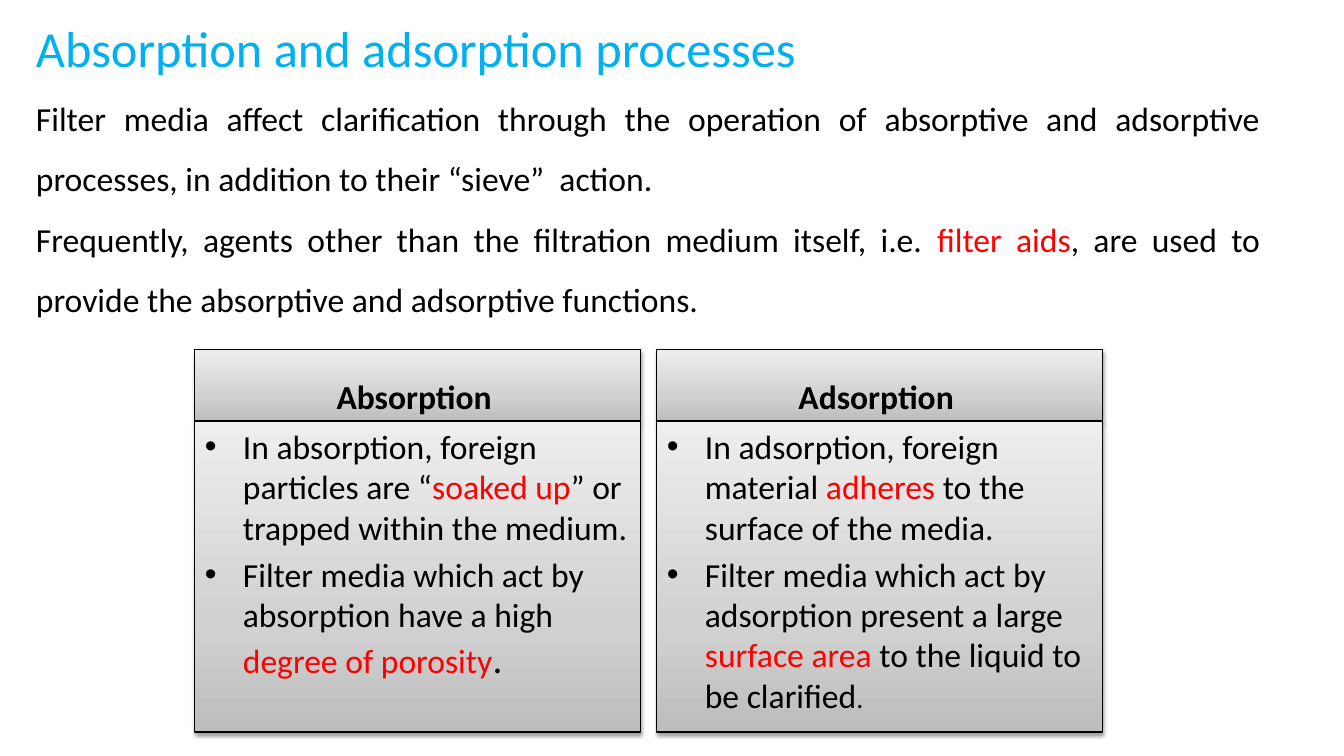
from lxml import etree
from pptx import Presentation
from pptx.dml.color import RGBColor
from pptx.enum.shapes import MSO_SHAPE as SHAPE
from pptx.enum.text import MSO_ANCHOR as ANCHOR, MSO_AUTO_SIZE as AUTO, PP_ALIGN as ALIGN
from pptx.oxml import parse_xml
from pptx.oxml.ns import nsdecls, qn
from pptx.util import Pt

SLIDE_W, SLIDE_H = 1344, 756
EMU_PER_PX = 12192000 / SLIDE_W

BLACK = RGBColor(0x00, 0x00, 0x00)
RED = RGBColor(0xFF, 0x00, 0x00)
SKY = RGBColor(0x00, 0xB0, 0xF0)
GREY_STOPS = [
    (0, RGBColor(0xBD, 0xBD, 0xBD)),
    (35, RGBColor(0xD1, 0xD1, 0xD1)),
    (100, RGBColor(0xEE, 0xEE, 0xEE)),
]


def px(n):
    return round(n * EMU_PER_PX)


def add_text(p, runs, size=24, color=BLACK, bold=False, align=ALIGN.LEFT,
             spacing=None, before=0, bullet=False):
    """Fill a paragraph; each run is a string or (string, overrides)."""
    if bullet:
        pPr = p._p.get_or_add_pPr()
        pPr.set("marL", str(px(38)))
        pPr.set("indent", str(-px(38)))
        etree.SubElement(pPr, qn("a:buFont")).set("typeface", "Arial")
        etree.SubElement(pPr, qn("a:buChar")).set("char", "•")
    p.alignment = align
    p.space_before = Pt(before)
    if spacing:
        p.line_spacing = spacing
    for run in runs:
        text, own = (run, {}) if isinstance(run, str) else run
        r = p.add_run()
        r.text = text
        r.font.name = "Calibri"
        r.font.size = Pt(own.get("size", size))
        r.font.color.rgb = own.get("color", color)
        r.font.bold = bold


def red(text):
    return text, {"color": RED}


class Deck:
    def __init__(self):
        self.prs = Presentation()
        self.prs.slide_width, self.prs.slide_height = px(SLIDE_W), px(SLIDE_H)
        self.s = self.prs.slides.add_slide(self.prs.slide_layouts[6])

    def paragraphs(self, tf, items):
        tf.word_wrap = True
        for i, (runs, style) in enumerate(items):
            p = tf.add_paragraph() if i else tf.paragraphs[0]
            add_text(p, runs, **style)

    def text_box(self, x, y, w, h, items):
        tf = self.s.shapes.add_textbox(px(x), px(y), px(w), px(h)).text_frame
        self.paragraphs(tf, items)
        tf.auto_size = AUTO.SHAPE_TO_FIT_TEXT

    def panel(self, x, y, w, h, items, anchor=ANCHOR.TOP):
        sp = self.s.shapes.add_shape(SHAPE.RECTANGLE, px(x), px(y), px(w), px(h))
        sp.line.color.rgb = BLACK
        sp.line.width = Pt(0.75)
        self.gradient(sp)
        self.soft_shadow(sp)
        sp.text_frame.vertical_anchor = anchor
        self.paragraphs(sp.text_frame, items)

    def gradient(self, sp):
        stops = "".join(f'<a:gs pos="{pos * 1000}"><a:srgbClr val="{c}"/></a:gs>'
                        for pos, c in GREY_STOPS)
        sp._element.spPr.find(qn("a:prstGeom")).addnext(parse_xml(
            f'<a:gradFill rotWithShape="1" {nsdecls("a")}><a:gsLst>{stops}</a:gsLst>'
            '<a:lin ang="16200000" scaled="1"/></a:gradFill>'))

    def soft_shadow(self, sp):
        sp.shadow.inherit = False
        sp._element.spPr.find(qn("a:effectLst")).append(parse_xml(
            f'<a:outerShdw {nsdecls("a")} blurRad="{Pt(3.1)}" dist="{Pt(1.6)}" '
            'dir="5400000" rotWithShape="0"><a:srgbClr val="000000">'
            '<a:alpha val="38000"/></a:srgbClr></a:outerShdw>'))


# Content of the two columns: heading, then bullets
COLUMNS = [
    ("Absorption ", [
        ["In absorption, foreign particles are “", red("soaked up"),
         "” or trapped within the medium."],
        ["Filter media which act by absorption have a high ",
         red("degree of porosity"), (".", {"size": 28})],
    ]),
    ("Adsorption ", [
        ["In adsorption, foreign material ", red("adheres"),
         " to the surface of the media."],
        ["Filter media which act by adsorption present a large ",
         red("surface area "), "to the liquid to be clarified", (".", {"size": 20})],
    ]),
]
LEFT, PITCH, WIDTH = 195, 462, 446
HEAD_Y, HEAD_H, BODY_H = 350, 71, 311


def main():
    deck = Deck()

    # Title and introduction
    body = {"align": ALIGN.JUSTIFY, "spacing": 1.5}
    deck.text_box(26, 12, 1244, 309, [
        (["Absorption and adsorption processes"],
         {"size": 36, "color": SKY, "align": ALIGN.JUSTIFY}),
        (["Filter media affect clarification through the operation of absorptive "
          "and adsorptive processes, in addition to their “sieve”  action."], body),
        (["Frequently, agents other than the filtration medium itself, i.e. ",
          red("filter aids"),
          ", are used to provide the absorptive and adsorptive functions."], body),
    ])

    # Comparison columns
    for i, (heading, bullets) in enumerate(COLUMNS):
        x = LEFT + i * PITCH
        deck.panel(x, HEAD_Y, WIDTH, HEAD_H,
                   [([heading], {"bold": True, "align": ALIGN.CENTER})], ANCHOR.BOTTOM)
        deck.panel(x, HEAD_Y + HEAD_H, WIDTH, BODY_H,
                   [(runs, {"bullet": True, "before": 4.8 if n else 0})
                    for n, runs in enumerate(bullets)])

    deck.prs.save("out.pptx")


if __name__ == "__main__":
    main()
